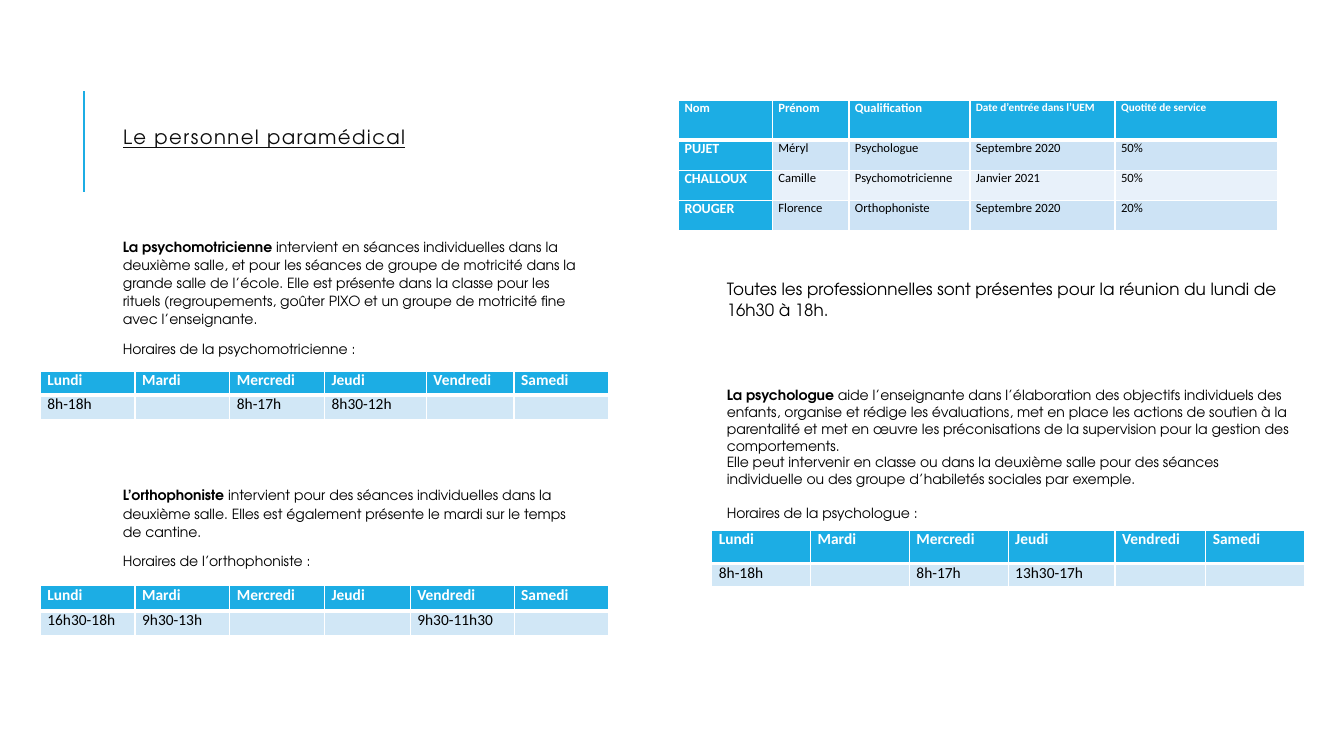
"""Build the slide presenting the paramedical staff and their weekly hours."""
from lxml import etree
from pptx import Presentation
from pptx import util as u
from pptx.dml.color import RGBColor
from pptx.enum import shapes, text
from pptx.oxml import ns

PX = 9144
BLUE = RGBColor(0x1C, 0xAD, 0xE4)
WHITE = RGBColor(0xFF, 0xFF, 0xFF)
BLACK = RGBColor(0, 0, 0)
TITLE_INK = RGBColor(0x0D, 0x0D, 0x0D)
HOURS_FILL = RGBColor(0xD1, 0xE7, 0xF6)
STAFF_BANDS = (RGBColor(0xCD, 0xE3, 0xF5), RGBColor(0xE8, 0xF1, 0xFA))
PROSE_FONT = "TeX Gyre Adventor"
TABLE_FONT = "Calibri"
DAYS = ("Lundi", "Mardi", "Mercredi", "Jeudi", "Vendredi", "Samedi")

STAFF = (
    ("Nom", "Prénom", "Qualification", "Date d’entrée dans l’UEM", "Quotité de service"),
    ("PUJET", "Méryl", "Psychologue", "Septembre 2020", "50%"),
    ("CHALLOUX", "Camille", "Psychomotricienne", "Janvier 2021", "50%"),
    ("ROUGER", "Florence", "Orthophoniste", "Septembre 2020", "20%"),
)

SCHEDULES = (
    ((40, 368), (94, 94, 94, 101, 87, 94), (24, 24),
     ("8h-18h", "", "8h-17h", "8h30-12h", "", "")),
    ((40, 581), (94, 94, 94, 85, 103, 94), (25, 25),
     ("16h30-18h", "9h30-13h", "", "", "9h30-11h30", "")),
    ((706, 526), (98, 98, 98, 106, 90, 98), (33, 23),
     ("8h-18h", "", "8h-17h", "13h30-17h", "", "")),
)

CARE_TEXT = (
    (6, 10, "La psychomotricienne ",
     "intervient en séances individuelles dans la deuxième salle, et pour les séances de "
     "groupe de motricité dans la grande salle de l’école. Elle est présente dans la classe "
     "pour les rituels (regroupements, goûter PIXO et un groupe de motricité fine avec "
     "l’enseignante."),
    (6, 10, "", "Horaires de la psychomotricienne :"),
    (90, 10, "L’orthophoniste",
     " intervient pour des séances individuelles dans la deuxième salle. Elles est également "
     "présente le mardi sur le temps de cantine."),
    (6, 10, "", "Horaires de l’orthophoniste :"),
)

PSYCHOLOGIST_TEXT = (
    (0, 12, "", "Toutes les professionnelles sont présentes pour la réunion du lundi de "
     "16h30 à 18h."),
    (48, 10, "La psychologue ",
     "aide l’enseignante dans l’élaboration des objectifs individuels des enfants, organise "
     "et rédige les évaluations, met en place les actions de soutien à la parentalité et met "
     "en œuvre les préconisations de la supervision pour la gestion des comportements."),
    (0, 10, "", "Elle peut intervenir en classe ou dans la deuxième salle pour des séances "
     "individuelle ou des groupe d’habiletés sociales par exemple."),
    (12, 10, "", "Horaires de la psychologue :"),
)


def add_run(paragraph, words, size, color=BLACK, bold=False, face=PROSE_FONT):
    """Append one formatted run and return it."""
    run = paragraph.add_run()
    run.text = words
    run.font.size = u.Pt(size)
    run.font.name = face
    run.font.bold = bold
    run.font.color.rgb = color
    return run


def add_title(slide, words):
    """Place and format the underlined title."""
    title = slide.shapes.title
    title.left, title.top, title.width, title.height = (n * PX for n in (112, 90, 480, 95))
    frame = title.text_frame
    frame.word_wrap = True
    frame.auto_size = text.MSO_AUTO_SIZE.NONE
    frame.vertical_anchor = text.MSO_ANCHOR.MIDDLE
    heading = frame.paragraphs[0]
    heading.alignment = text.PP_ALIGN.LEFT
    heading.line_spacing = 0.8
    run = add_run(heading, words, 14, TITLE_INK)
    run.font.underline = True
    run.font._element.set("spc", "100")


def add_accent(slide):
    """Draw the vertical rule beside the title."""
    accent = slide.shapes.add_connector(
        shapes.MSO_CONNECTOR.STRAIGHT, 83 * PX, 190 * PX, 83 * PX, 90 * PX)
    accent.line.color.rgb = BLUE
    accent.line.width = u.Pt(1.5)
    etree.SubElement(accent._element.spPr, ns.qn("a:effectLst"))


def add_prose(slide, box, paragraphs, line_spacing=1.0, space_after=0):
    """Write paragraphs that may open with a bold lead."""
    frame = slide.shapes.add_textbox(*(n * PX for n in box)).text_frame
    frame.word_wrap = True
    for index, (space_before, size, lead, words) in enumerate(paragraphs):
        paragraph = frame.add_paragraph() if index else frame.paragraphs[0]
        paragraph.line_spacing = line_spacing
        paragraph.space_before = u.Pt(space_before)
        paragraph.space_after = u.Pt(space_after)
        if lead:
            add_run(paragraph, lead, size, bold=True)
        add_run(paragraph, words, size)


def add_borders(cell, bottom):
    """Give a cell white borders with the given bottom width in points."""
    properties = cell._tc.get_or_add_tcPr()
    for side, points in (("L", 1), ("R", 1), ("T", 1), ("B", bottom)):
        border = etree.SubElement(properties, ns.qn(f"a:ln{side}"), w=str(u.Pt(points)))
        paint = etree.SubElement(border, ns.qn("a:solidFill"))
        etree.SubElement(paint, ns.qn("a:srgbClr"), val=str(WHITE))


def fill_cell(cell, words, size, fill, strong, margin, bottom=1, space_after=0):
    """Format one table cell and write its words."""
    add_borders(cell, bottom)
    cell.fill.solid()
    cell.fill.fore_color.rgb = fill
    cell.margin_left = cell.margin_right = margin * PX
    cell.margin_top = cell.margin_bottom = 0
    paragraph = cell.text_frame.paragraphs[0]
    paragraph.space_after = u.Pt(space_after)
    if words:
        add_run(paragraph, words, size, WHITE if strong else BLACK, strong, TABLE_FONT)
    else:
        etree.SubElement(paragraph._p, ns.qn("a:endParaRPr"), sz=str(size * 100))


def add_grid(slide, corner, widths, heights):
    """Add an empty table with the given column widths and row heights."""
    bounds = (*corner, sum(widths), sum(heights))
    grid = slide.shapes.add_table(
        len(heights), len(widths), *(n * PX for n in bounds)).table
    for column, width in zip(grid.columns, widths):
        column.width = width * PX
    for row, height in zip(grid.rows, heights):
        row.height = height * PX
    return grid


def add_staff(slide):
    """Add the table of staff members."""
    grid = add_grid(slide, (673, 100), (93, 76, 120, 144, 161), (39, 30, 30, 30))
    for r, member in enumerate(STAFF):
        for c, words in enumerate(member):
            strong = r == 0 or c == 0
            if r == 0:
                size = 9 if c < 3 else 8
            else:
                size = 10 if c == 0 else 9
            fill = BLUE if strong else STAFF_BANDS[(r - 1) % 2]
            fill_cell(grid.cell(r, c), words, size, fill, strong, 6,
                      bottom=1 if r else 3, space_after=6)


def add_schedule(slide, corner, widths, heights, hours):
    """Add one weekly timetable."""
    grid = add_grid(slide, corner, widths, heights)
    for c, (day, slot) in enumerate(zip(DAYS, hours)):
        fill_cell(grid.cell(0, c), day, 11, BLUE, True, 7, bottom=3)
        fill_cell(grid.cell(1, c), slot, 11, HOURS_FILL, False, 7)


def main():
    """Assemble and save the slide."""
    deck = Presentation()
    deck.slide_width, deck.slide_height = 1333 * PX, 750 * PX
    slide = deck.slides.add_slide(deck.slide_layouts[5])
    add_accent(slide)
    add_title(slide, "Le personnel paramédical")
    add_staff(slide)
    add_prose(slide, (112, 230, 480, 428), CARE_TEXT, line_spacing=1.08, space_after=2)
    add_prose(slide, (711, 272, 582, 300), PSYCHOLOGIST_TEXT)
    for schedule in SCHEDULES:
        add_schedule(slide, *schedule)
    deck.save("out.pptx")


if __name__ == "__main__":
    main()
